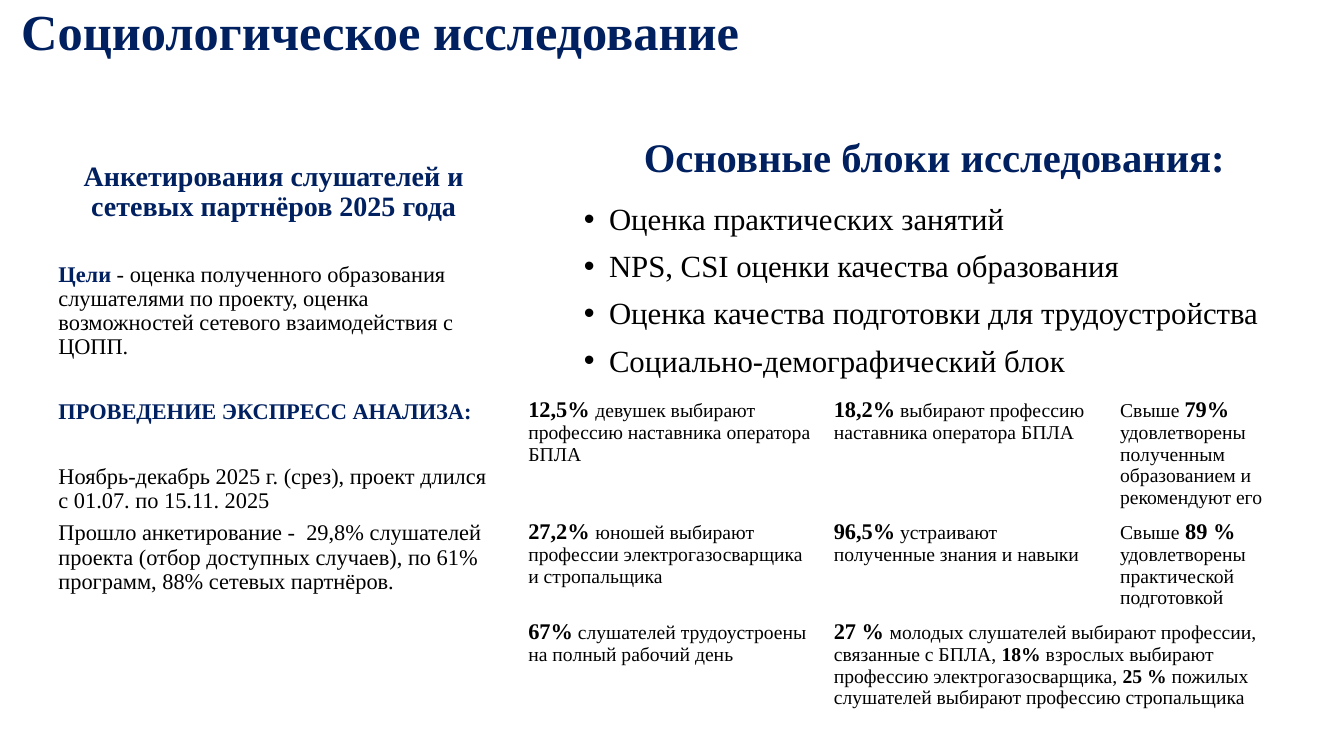
from lxml import etree
from pptx import Presentation
from pptx.dml.color import RGBColor
from pptx.enum.text import MSO_ANCHOR, MSO_AUTO_SIZE, PP_ALIGN
from pptx.oxml.ns import qn
from pptx.util import Inches, Pt

NAVY = RGBColor(0x00, 0x20, 0x60)
BLACK = RGBColor(0x00, 0x00, 0x00)
FONT = "Times New Roman"
CENTER, LEFT = PP_ALIGN.CENTER, PP_ALIGN.LEFT
MIDDLE = MSO_ANCHOR.MIDDLE
NO_AUTOFIT = MSO_AUTO_SIZE.NONE

BLOCKS = [
    "Оценка практических занятий",
    "NPS, CSI оценки качества образования",
    "Оценка качества подготовки для трудоустройства",
    "Социально-демографический блок",
]
COLUMN_WIDTHS = [3.03, 2.84, 2.12]
ROW_HEIGHTS = [1.21, 0.99, 1.23]
FINDINGS = [
    [
        [("12,5% ", 16), ("девушек выбирают профессию наставника оператора БПЛА",)],
        [("18,2%", 16), (" выбирают профессию наставника оператора БПЛА",)],
        [("Свыше ",), ("79% ", 16), ("удовлетворены полученным образованием и рекомендуют его",)],
    ],
    [
        [("27,2% ", 16), ("юношей выбирают профессии электрогазосварщика и стропальщика",)],
        [("96,5%", 16), (" устраивают полученные знания и навыки",)],
        [("Свыше",), (" 89 %", 16), (" удовлетворены практической подготовкой",)],
    ],
    [
        [("67%", 16), (" слушателей трудоустроены на полный рабочий день",)],
        [("27 % ", 16), ("молодых слушателей выбирают профессии, связанные с БПЛА, ",),
         ("18%", 14), (" взрослых выбирают профессию электрогазосварщика, ",),
         ("25 %", 14), (" пожилых слушателей выбирают профессию стропальщика",)],
    ],
]


def add_run(paragraph, text, size=16, color=BLACK, bold=False):
    """Append a formatted run to the paragraph."""
    run = paragraph.add_run()
    run.text = text
    run.font.name = FONT
    run.font.size = Pt(size)
    run.font.bold = bold
    run.font.color.rgb = color


def add_paragraph(frame, text, align=LEFT, before=0, after=0, bullet=False, **run_format):
    """Add a paragraph with its spacing, bullet and first run, and return it."""
    first = frame.paragraphs[0]
    paragraph = frame.add_paragraph() if first.runs else first
    paragraph.alignment = align
    paragraph.line_spacing = 0.9
    paragraph.space_before = Pt(before)
    paragraph.space_after = Pt(after)
    properties = paragraph._p.get_or_add_pPr()
    indent = Inches(0.25) if bullet else 0
    properties.set("marL", str(indent))
    properties.set("indent", str(-indent))
    if bullet:
        font = etree.SubElement(properties, qn("a:buFont"))
        font.set("typeface", "Arial")
        etree.SubElement(properties, qn("a:buChar")).set("char", "•")
    else:
        etree.SubElement(properties, qn("a:buNone"))
    add_run(paragraph, text, **run_format)
    return paragraph


def place(shape, left, top, width, height):
    """Move a placeholder to its box and return its text frame."""
    shape.left, shape.top = Inches(left), Inches(top)
    shape.width, shape.height = Inches(width), Inches(height)
    frame = shape.text_frame
    frame.word_wrap = True
    frame.auto_size = NO_AUTOFIT
    frame.vertical_anchor = MIDDLE
    return frame


def fill_title(shape, *box):
    """Write the slide title."""
    add_paragraph(place(shape, *box), "Социологическое исследование",
                  size=36, color=NAVY, bold=True)


def fill_survey(shape, *box):
    """Write the survey's aims, dates and coverage."""
    frame = place(shape, *box)
    section_gap = 29
    add_paragraph(frame, "Анкетирования слушателей и сетевых партнёров 2025 года",
                  align=CENTER, after=section_gap, size=20, color=NAVY, bold=True)
    aims = add_paragraph(frame, "Цели", after=section_gap, color=NAVY, bold=True)
    add_run(aims, " - оценка полученного образования слушателями по проекту, "
                  "оценка возможностей сетевого взаимодействия с ЦОПП.")
    add_paragraph(frame, "ПРОВЕДЕНИЕ ЭКСПРЕСС АНАЛИЗА:",
                  after=section_gap, color=NAVY, bold=True)
    add_paragraph(frame, "Ноябрь-декабрь 2025 г. (срез), проект длился "
                         "с 01.07. по 15.11. 2025", after=6)
    add_paragraph(frame, "Прошло анкетирование -  29,8% слушателей проекта (отбор доступных "
                         "случаев), по 61% программ, 88% сетевых партнёров.", after=6)


def fill_blocks(shape, *box):
    """List the main blocks of the study."""
    frame = place(shape, *box)
    add_paragraph(frame, "Основные блоки исследования:", align=CENTER, after=6,
                  size=29, color=NAVY, bold=True)
    for block in BLOCKS:
        add_paragraph(frame, block, before=10, bullet=True, size=22)


def add_findings(slide, left, top):
    """Add the table of findings, with its last cell spanning two columns."""
    table = slide.shapes.add_table(
        len(ROW_HEIGHTS), len(COLUMN_WIDTHS), Inches(left), Inches(top),
        Inches(sum(COLUMN_WIDTHS)), Inches(sum(ROW_HEIGHTS))).table
    table.first_row = table.horz_banding = False
    for column, width in zip(table.columns, COLUMN_WIDTHS):
        column.width = Inches(width)
    for row, height in zip(table.rows, ROW_HEIGHTS):
        row.height = Inches(height)
    for cell in table.iter_cells():
        cell.fill.background()
    table.cell(2, 1).merge(table.cell(2, 2))
    for row_index, findings in enumerate(FINDINGS):
        for column_index, finding in enumerate(findings):
            paragraph = table.cell(row_index, column_index).text_frame.paragraphs[0]
            for text, *bold_size in finding:
                size = bold_size[0] if bold_size else 14
                add_run(paragraph, text, size=size, bold=bool(bold_size))


def main():
    """Build and save the slide."""
    presentation = Presentation()
    presentation.slide_width, presentation.slide_height = Inches(13.33), Inches(7.5)
    two_content_layout = presentation.slide_layouts[3]
    slide = presentation.slides.add_slide(two_content_layout)
    title, survey, blocks = slide.placeholders
    fill_title(title, 0.11, 0, 13.22, 0.68)
    fill_survey(survey, 0.48, 0.68, 4.47, 6.14)
    fill_blocks(blocks, 5.69, 1.01, 7.16, 3.1)
    add_findings(slide, 5.14, 3.89)
    presentation.save("out.pptx")


if __name__ == "__main__":
    main()
